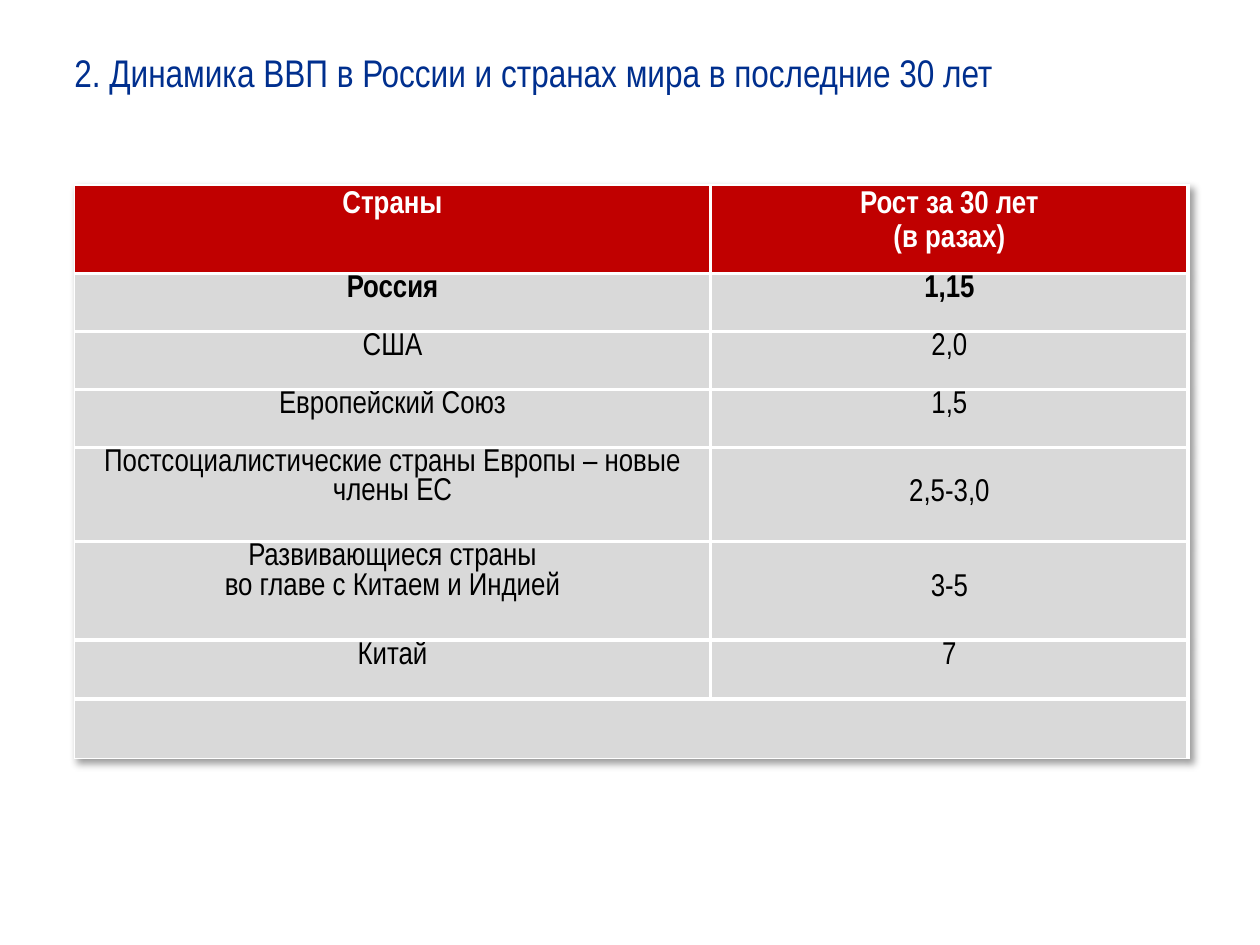
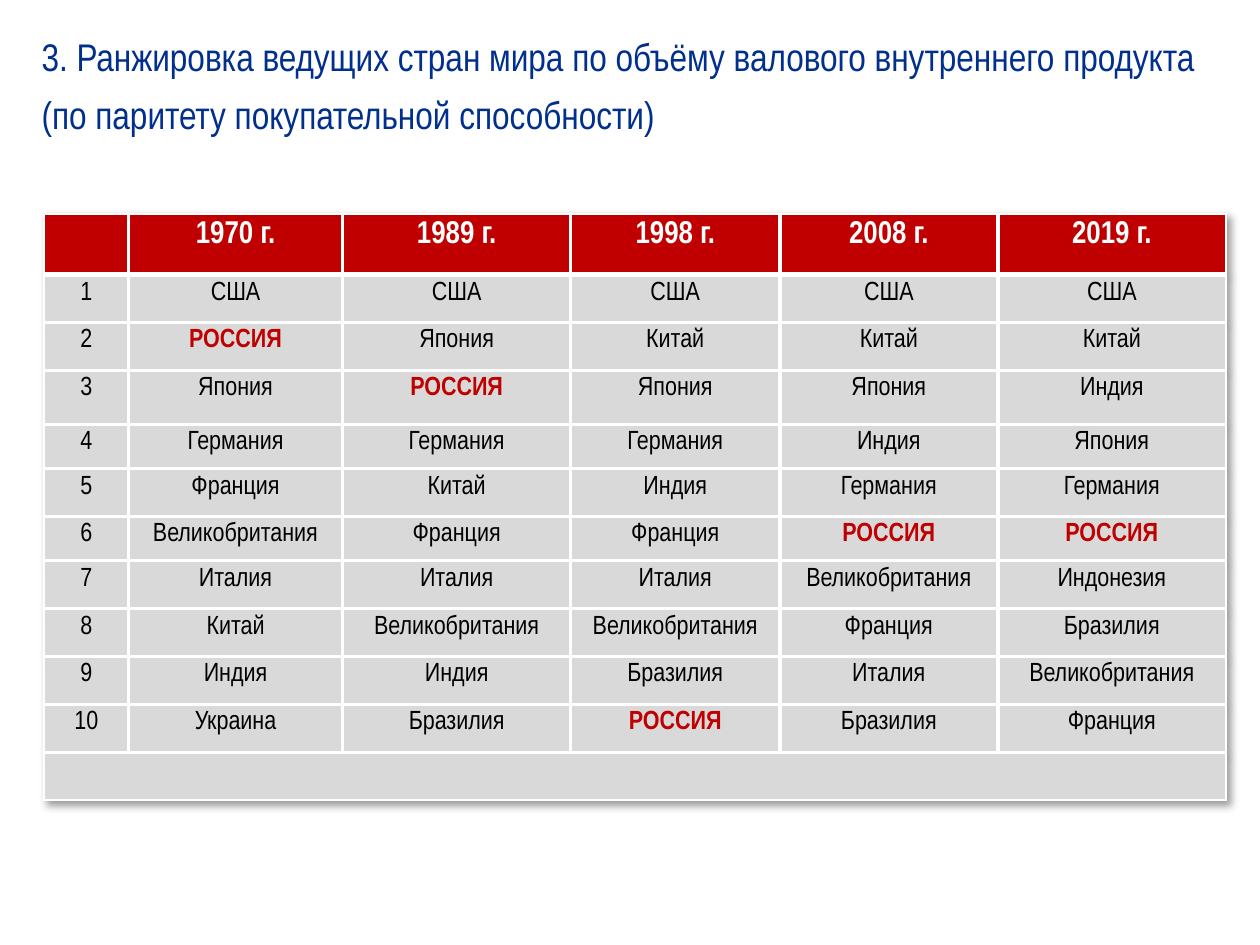
from lxml import etree
from pptx import Presentation
from pptx import util as u
from pptx.dml.color import RGBColor
from pptx.enum import text
from pptx.oxml import parse_xml
from pptx.oxml.ns import nsdecls

FONT = "Arial Narrow"
NAVY, RED, GREY, WHITE, BLACK = "002F8E", "C00000", "D9D9D9", "FFFFFF", "000000"
LINE, EDGE = 2.25, 1
RUSSIA = "РОССИЯ"

GROWTH = [
    ("Страны", "Рост за 30 лет\n(в разах)"),
    ("Россия", "1,15"),
    ("США", "2,0"),
    ("Европейский Союз", "1,5"),
    ("Постсоциалистические страны Европы – новые члены ЕС", "2,5-3,0"),
    ("Развивающиеся страны\nво главе с Китаем и Индией", "3-5"),
    ("Китай", "7"),
]

RANKING = {
    "1970 г.": ["США", RUSSIA, "Япония", "Германия", "Франция",
                "Великобритания", "Италия", "Китай", "Индия", "Украина"],
    "1989 г.": ["США", "Япония", RUSSIA, "Германия", "Китай",
                "Франция", "Италия", "Великобритания", "Индия", "Бразилия"],
    "1998 г.": ["США", "Китай", "Япония", "Германия", "Индия",
                "Франция", "Италия", "Великобритания", "Бразилия", RUSSIA],
    "2008 г.": ["США", "Китай", "Япония", "Индия", "Германия",
                RUSSIA, "Великобритания", "Франция", "Италия", "Бразилия"],
    "2019 г.": ["США", "Китай", "Индия", "Япония", "Германия",
                RUSSIA, "Индонезия", "Бразилия", "Великобритания", "Франция"],
}


def rgb(value):
    return RGBColor.from_string(value)


def set_borders(cell, widths):
    """Draw white borders; widths are points for left, right, top, bottom."""
    props = cell._tc.get_or_add_tcPr()
    for index, (side, width) in enumerate(zip("LRTB", widths)):
        props.insert(index, parse_xml(
            f'<a:ln{side} {nsdecls("a")} w="{u.Pt(width)}"><a:solidFill>'
            f'<a:srgbClr val="{WHITE}"/></a:solidFill></a:ln{side}>'))


def add_table_shadow(table):
    table._tbl.tblPr.insert(0, parse_xml(
        f'<a:effectLst {nsdecls("a")}><a:outerShdw blurRad="50800" dist="38100" '
        'dir="2700000" algn="tl" rotWithShape="0"><a:srgbClr val="000000">'
        '<a:alpha val="40000"/></a:srgbClr></a:outerShdw></a:effectLst>'))


class Deck:
    def __init__(self):
        self.prs = Presentation()
        self.prs.slide_width, self.prs.slide_height = u.Inches(10), u.Inches(7.5)
        self.slide = None

    def new_slide(self):
        self.slide = self.prs.slides.add_slide(self.prs.slide_layouts[5])

    def run(self, paragraph, words, size, color, bold=False):
        run = paragraph.add_run()
        run.text = words
        run.font.name, run.font.size, run.font.bold = FONT, u.Pt(size), bold
        run.font.color.rgb = rgb(color)

    def title(self, words, left, top, width, height, indent=0):
        title = self.slide.shapes.title
        title.left, title.top = u.Inches(left), u.Inches(top)
        title.width, title.height = u.Inches(width), u.Inches(height)
        frame = title.text_frame
        frame.word_wrap = True
        frame.auto_size = text.MSO_AUTO_SIZE.SHAPE_TO_FIT_TEXT
        frame.vertical_anchor = text.MSO_ANCHOR.MIDDLE
        paragraph = frame.paragraphs[0]
        paragraph.alignment = text.PP_ALIGN.LEFT
        paragraph.line_spacing = 1.25
        paragraph._p.get_or_add_pPr().set("indent", str(u.Inches(indent)))
        self.run(paragraph, words, 22, NAVY)

    def cell_text(self, cell, words, size, color, bold, spacing):
        for index, line in enumerate(words.split("\n")):
            frame = cell.text_frame
            paragraph = frame.add_paragraph() if index else frame.paragraphs[0]
            paragraph.alignment = text.PP_ALIGN.CENTER
            paragraph.line_spacing = spacing
            if line:
                self.run(paragraph, line, size, color, bold)

    def table(self, rows, left, top, widths, heights, size, marked,
              header_spacing=1.0, header_line=LINE, right_edge=EDGE, margins=None):
        """Red header, grey body and a merged empty row at the foot.

        marked maps a cell's text to the colour in which it is set in bold.
        """
        rows = [*rows, ("",) * len(widths)]
        last_row, last_col = len(rows) - 1, len(widths) - 1
        table = self.slide.shapes.add_table(
            len(rows), len(widths), u.Inches(left), u.Inches(top),
            u.Inches(sum(widths)), u.Inches(sum(heights))).table
        table.first_row = table.horz_banding = False
        add_table_shadow(table)
        for column, width in zip(table.columns, widths):
            column.width = u.Inches(width)
        for row, height in zip(table.rows, heights):
            row.height = u.Inches(height)
        for r, values in enumerate(rows):
            for c, words in enumerate(values):
                cell = table.cell(r, c)
                cell.fill.solid()
                cell.fill.fore_color.rgb = rgb(GREY if r else RED)
                set_borders(cell, (
                    LINE if c else EDGE,
                    right_edge if c == last_col or r == last_row else LINE,
                    EDGE if r == 0 else header_line if r == 1 else LINE,
                    header_line if r == 0 else EDGE if r == last_row else LINE))
                if margins or r == last_row:
                    side, above = margins or (0.1, 0)
                    cell.margin_left = cell.margin_right = u.Inches(side)
                    cell.margin_top, cell.margin_bottom = u.Inches(above), 0
                if r:
                    self.cell_text(cell, words, size, marked.get(words, BLACK),
                                   words in marked, 1.0)
                else:
                    self.cell_text(cell, words, 18, WHITE, True, header_spacing)
        table.cell(last_row, 0).merge(table.cell(last_row, last_col))
        return table


def growth_slide(deck):
    deck.new_slide()
    deck.title("2. Динамика ВВП в России и странах мира в последние 30 лет",
               0, 0.29, 9.49, 0.47, indent=0.49)
    growth = deck.table(
        GROWTH, 0.59, 1.47, [5.05, 3.79],
        [0.69, 0.46, 0.46, 0.46, 0.75, 0.78, 0.47, 0.47], 18,
        {"Россия": BLACK, "1,15": BLACK},
        header_spacing=1.15, right_edge=LINE, margins=(0.07, 0.01))
    for row in (4, 5):  # the value stands beside the second line of the name
        growth.cell(row, 1).margin_top = u.Inches(0.25)


def ranking_slide(deck):
    deck.new_slide()
    deck.title("3. Ранжировка ведущих стран мира по объёму валового внутреннего "
               "продукта (по паритету покупательной способности)",
               0.23, 0.21, 9.46, 0.84)
    places = [(str(place), *countries)
              for place, countries in enumerate(zip(*RANKING.values()), 1)]
    deck.table(
        [("", *RANKING), *places], 0.35, 1.7,
        [0.67, 1.7, 1.81, 1.66, 1.73, 1.81],
        [0.48, 0.38, 0.38, 0.43, 0.35, 0.38, 0.35] + [0.38] * 5, 15,
        {RUSSIA: RED}, header_line=3)


def main():
    deck = Deck()
    growth_slide(deck)
    ranking_slide(deck)
    deck.prs.save("out.pptx")


if __name__ == "__main__":
    main()
